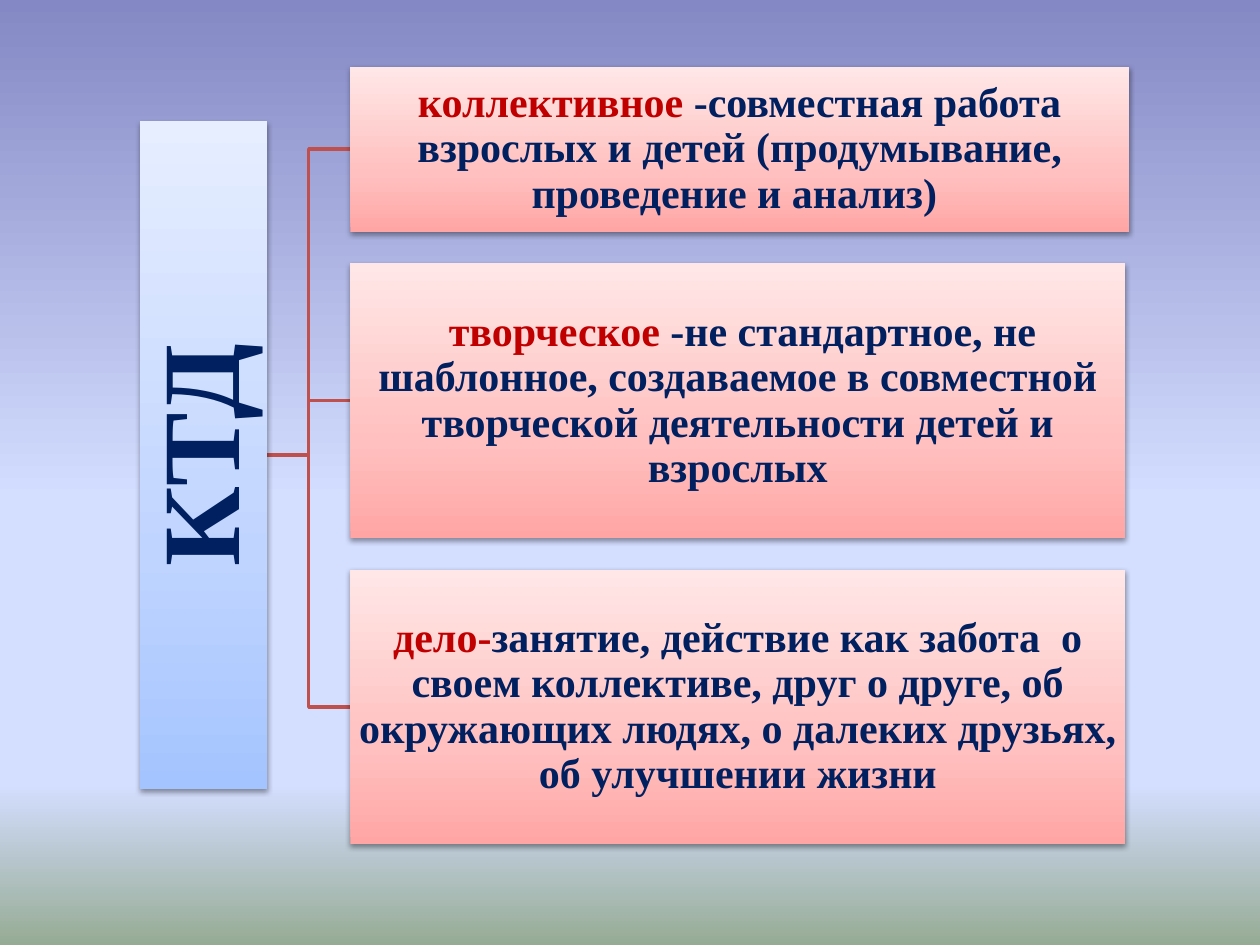
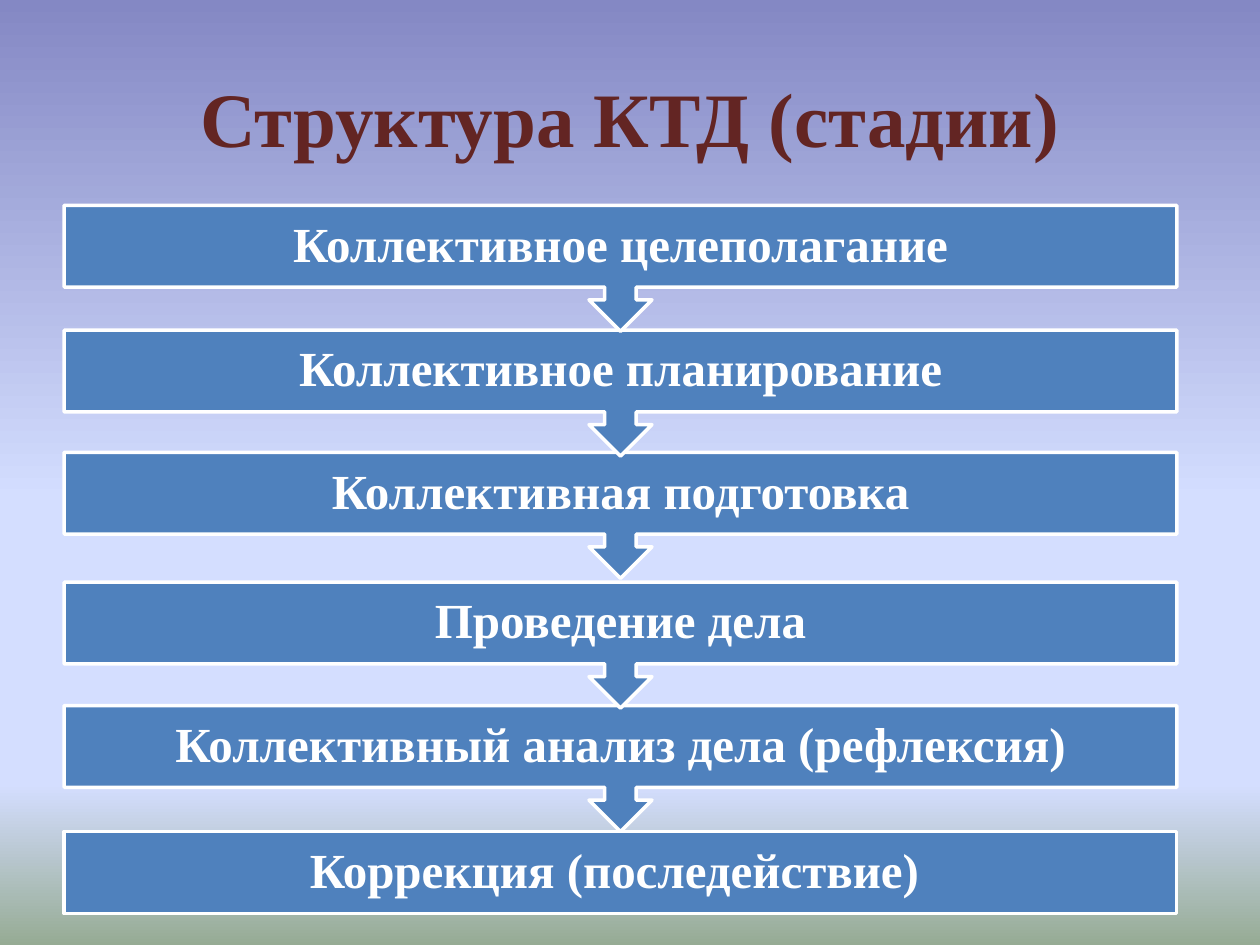
"""Builds two slides: the meaning of КТД and its stages."""
import lxml.etree
import pptx
import pptx.dml.color
import pptx.enum.shapes
import pptx.enum.text
import pptx.oxml.ns
import pptx.util

Inches = pptx.util.Inches
Pt = pptx.util.Pt
qn = pptx.oxml.ns.qn
SHAPES = pptx.enum.shapes.MSO_SHAPE

FONT = "Times New Roman"
NAVY, RED, MAROON, WHITE = "002060", "C00000", "632523", "FFFFFF"
STEP_BLUE, BRACKET_RED = "4F81BD", "C0504D"
SKY = [(0, "8488C4"), (53, "D4DEFF"), (83, "D4DEFF"), (100, "96AB94")]
BLUE_FADE = [(0, "A4C4FF"), (35, "BFD4FF"), (100, "E6EEFF")]
PINK_FADE = [(0, "FFA6A5"), (35, "FFC0BF"), (100, "FFE7E7")]

MEANINGS = [
    (0, 6.18, 1.31, [
        ("коллективное ", 24, RED),
        ("-совместная работа взрослых и детей (продумывание, проведение и анализ) ", 24, NAVY)]),
    (1.56, 6.15, 2.18, [
        (" ", 22, NAVY),
        ("творческое", 24, RED),
        (" -не стандартное, не шаблонное, создаваемое в совместной творческой "
         "деятельности детей и взрослых", 24, NAVY)]),
    (3.99, 6.15, 2.18, [
        ("дело-", 24, RED),
        ("занятие, действие как забота  о своем коллективе, друг о друге, об окружающих людях, "
         "о далеких друзьях, об улучшении жизни", 24, NAVY)]),
]
STAGES = [
    (0, "Коллективное целеполагание"),
    (0.99, "Коллективное планирование"),
    (1.96, "Коллективная подготовка"),
    (2.99, "Проведение дела"),
    (3.97, "Коллективный анализ дела (рефлексия)"),
    (4.97, "Коррекция (последействие) "),
]


def color(value):
    """Turn a hex string into a colour."""
    return pptx.dml.color.RGBColor.from_string(value)


def set_values(target, values):
    """Set each attribute named in a dict."""
    for name, value in values.items():
        setattr(target, name, value)


def fill_gradient(owner, fill, stops, angle):
    """Give a fill a linear gradient with any number of stops."""
    fill.gradient()
    fill.gradient_angle = angle
    stop_list = next(owner.element.iter(qn("a:gsLst")))
    for stop in list(stop_list):
        stop_list.remove(stop)
    for position, value in stops:
        stop = lxml.etree.SubElement(stop_list, qn("a:gs"), pos=str(position * 1000))
        lxml.etree.SubElement(stop, qn("a:srgbClr"), val=value)


def write_text(shape, runs, inset, line_spacing=0.9):
    """Write one centred bold paragraph from (text, size, colour) runs."""
    margins = {f"margin_{side}": Inches(inset) for side in ("left", "top", "right", "bottom")}
    set_values(shape.text_frame, {
        "word_wrap": True, "vertical_anchor": pptx.enum.text.MSO_ANCHOR.MIDDLE, **margins})
    paragraph = shape.text_frame.paragraphs[0]
    set_values(paragraph, {
        "alignment": pptx.enum.text.PP_ALIGN.CENTER, "line_spacing": line_spacing})
    for text, size, value in runs:
        run = paragraph.add_run()
        run.text = text
        set_values(run.font, {"name": FONT, "size": Pt(size), "bold": True})
        run.font.color.rgb = color(value)


def add_fade_box(slide, left, top, width, height, stops):
    """Add a borderless gradient rectangle with a soft shadow below."""
    shape = slide.shapes.add_shape(
        SHAPES.RECTANGLE, Inches(left), Inches(top), Inches(width), Inches(height))
    shape.line.fill.background()
    fill_gradient(shape, shape.fill, stops, 90)
    shape.shadow.inherit = False
    effects = shape.element.spPr.find(qn("a:effectLst"))
    shadow = lxml.etree.SubElement(
        effects, qn("a:outerShdw"), blurRad=str(Pt(3.15)), dist=str(Pt(1.6)),
        dir="5400000", rotWithShape="0")
    shadow_color = lxml.etree.SubElement(shadow, qn("a:srgbClr"), val="000000")
    lxml.etree.SubElement(shadow_color, qn("a:alpha"), val="38000")
    return shape


def add_bracket_arm(slide, left, top, right, bottom):
    """Add an elbow line from the root to a meaning."""
    arm = slide.shapes.add_connector(
        pptx.enum.shapes.MSO_CONNECTOR.ELBOW,
        Inches(left), Inches(top), Inches(right), Inches(bottom))
    arm.line.color.rgb = color(BRACKET_RED)
    arm.line.width = Pt(2)
    lxml.etree.SubElement(arm.element.spPr, qn("a:effectLst"))


def add_meaning_tree(slide, left, top):
    """Add the vertical root, the bracket and the three meanings."""
    root_width, root_height, root_top = 1.01, 5.3, top + 0.43
    root_right, root_middle = left + root_width, root_top + root_height / 2
    meaning_left = root_right + 0.66
    for offset, width, height, runs in MEANINGS:
        meaning_top = top + offset
        add_bracket_arm(slide, root_right, root_middle, meaning_left, meaning_top + height / 2)
        meaning = add_fade_box(slide, meaning_left, meaning_top, width, height, PINK_FADE)
        write_text(meaning, runs, 0.02)
    root = add_fade_box(slide, left, root_top, root_width, root_height, BLUE_FADE)
    write_text(root, [("КТД", 63, NAVY)], 0.04)
    root.text_frame._txBody.bodyPr.set("vert", "vert270")


def add_title(slide, text, left, top, width, height):
    """Add a centred slide title."""
    title = slide.shapes.add_textbox(Inches(left), Inches(top), Inches(width), Inches(height))
    write_text(title, [(text, 44, MAROON)], 0.05, 1)


def add_stage_chain(slide, left, top, width):
    """Add the stages, each pointing down at the next one."""
    last_offset = STAGES[-1][0]
    for offset, text in reversed(STAGES):
        is_last = offset == last_offset
        kind = SHAPES.RECTANGLE if is_last else SHAPES.DOWN_ARROW_CALLOUT
        height = 0.65 if is_last else 1
        stage = slide.shapes.add_shape(
            kind, Inches(left), Inches(top + offset), Inches(width), Inches(height))
        stage.shadow.inherit = False
        stage.fill.solid()
        stage.fill.fore_color.rgb = color(STEP_BLUE)
        stage.line.color.rgb = color(WHITE)
        stage.line.width = Pt(2)
        write_text(stage, [(text, 28, WHITE)], 0.22)


def main():
    """Build and save the presentation."""
    presentation = pptx.Presentation()
    set_values(presentation, {"slide_width": Inches(10), "slide_height": Inches(7.5)})
    master = presentation.slide_master
    fill_gradient(master, master.background.fill, SKY, 270)
    blank = presentation.slide_layouts[6]

    add_meaning_tree(presentation.slides.add_slide(blank), 1.11, 0.53)

    stages_slide = presentation.slides.add_slide(blank)
    add_title(stages_slide, "Структура КТД (стадии)", 0.5, 0.3, 9, 1.25)
    add_stage_chain(stages_slide, 0.51, 1.63, 8.83)
    presentation.save("out.pptx")


if __name__ == "__main__":
    main()
